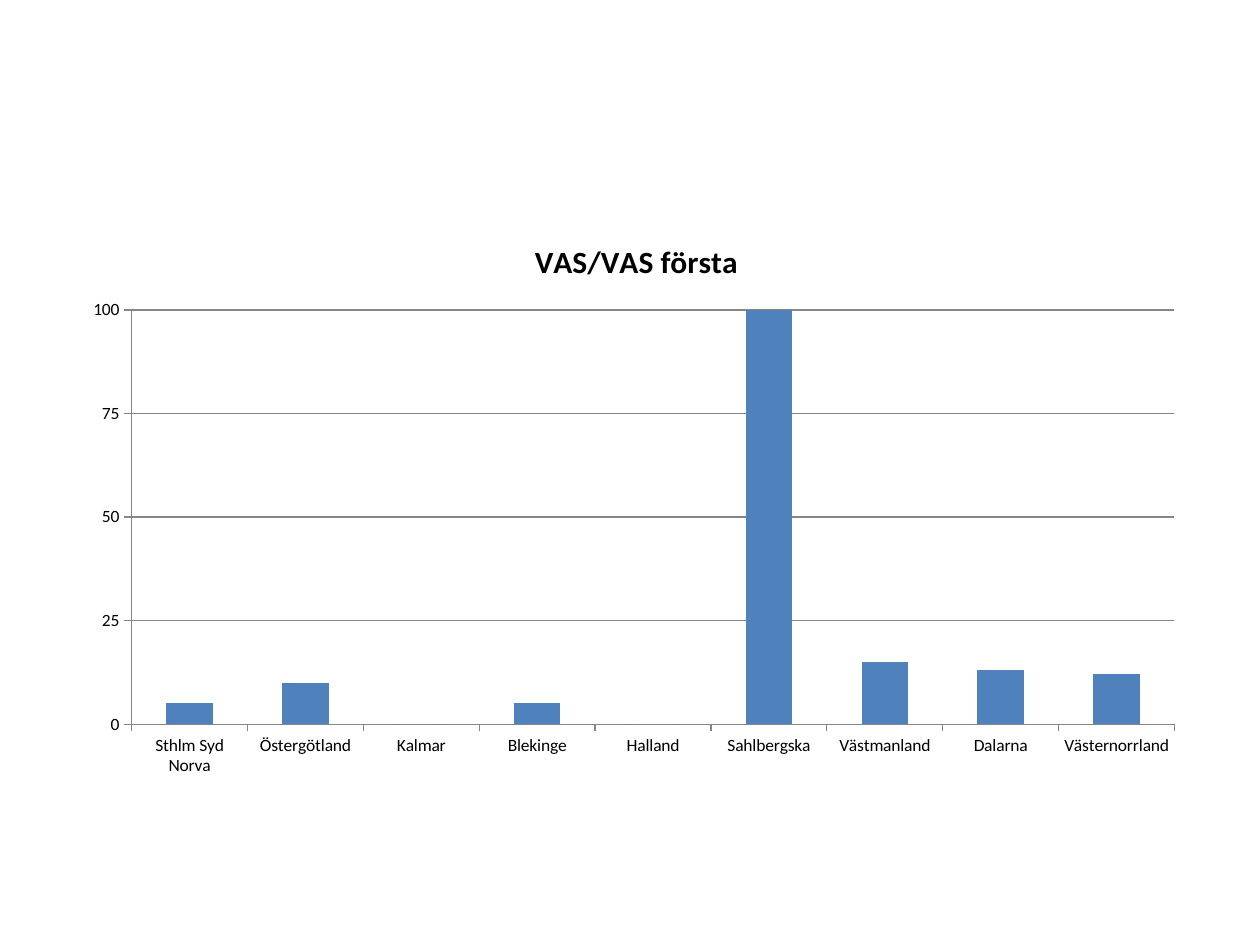
import pptx
import pptx.chart.data
import pptx.dml.color
import pptx.enum.chart
import pptx.oxml
import pptx.oxml.ns
import pptx.util

COLORS = {"text": "000000", "bar": "4F81BD", "line": "868686"}
TITLE = "VAS/VAS första"
RESULTS = {
    "Sthlm Syd Norva": 5,
    "Östergötland": 10,
    "Kalmar": 0,
    "Blekinge": 5,
    "Halland": 0,
    "Sahlbergska": 100,
    "Västmanland": 15,
    "Dalarna": 13,
    "Västernorrland": 12,
}


class SlideBuilder:
    """Holds the deck, its style and the current slide."""

    font_name = "Calibri"
    text_size = 10
    title_size = 18

    def __init__(self, width, height):
        self.deck = pptx.Presentation()
        self.deck.slide_width = pptx.util.Inches(width)
        self.deck.slide_height = pptx.util.Inches(height)
        self.slide = self.deck.slides.add_slide(self.deck.slide_layouts[6])

    def color(self, name):
        return pptx.dml.color.RGBColor.from_string(COLORS[name])

    def style_font(self, font, size, bold=False):
        font.name = self.font_name
        font.size = pptx.util.Pt(size)
        font.bold = bold
        font.color.rgb = self.color("text")

    def style_line(self, line):
        line.color.rgb = self.color("line")
        line.width = pptx.util.Pt(0.75)

    def column_chart(self, title, results, left, top, width, height):
        """Place a column chart; lengths are shares of the slide."""
        data = pptx.chart.data.CategoryChartData()
        data.categories = list(results)
        data.add_series(title, list(results.values()))
        across, down = self.deck.slide_width, self.deck.slide_height
        chart = self.slide.shapes.add_chart(
            pptx.enum.chart.XL_CHART_TYPE.COLUMN_CLUSTERED,
            int(left * across), int(top * down),
            int(width * across), int(height * down), data).chart
        self.style_font(chart.font, self.text_size)
        chart.has_legend = False

        # Title
        chart.has_title = True
        frame = chart.chart_title.text_frame
        frame.text = title
        self.style_font(frame.paragraphs[0].runs[0].font, self.title_size, True)
        chart.chart_title.include_in_layout = False

        # Bars
        plot = chart.plots[0]
        plot.gap_width = 150
        plot.vary_by_categories = False
        fill = plot.series[0].format.fill
        fill.solid()
        fill.fore_color.rgb = self.color("bar")

        # Axes and gridlines
        for axis in (chart.category_axis, chart.value_axis):
            axis.major_tick_mark = pptx.enum.chart.XL_TICK_MARK.OUTSIDE
            axis.minor_tick_mark = pptx.enum.chart.XL_TICK_MARK.NONE
            self.style_line(axis.format.line)
        scale = chart.value_axis
        scale.minimum_scale, scale.maximum_scale = 0, 100
        scale.major_unit = 25
        scale.has_major_gridlines = True
        self.style_line(scale.major_gridlines.format.line)
        return chart

    def place_plot(self, chart, **shares):
        """Fix the inner plot area as shares of the chart (x, y, w, h)."""
        area = chart._chartSpace.chart.plotArea
        for old in area.findall(pptx.oxml.ns.qn("c:layout")):
            area.remove(old)
        sizes = "".join(f'<c:{key} val="{share}"/>' for key, share in shares.items())
        area.insert(0, pptx.oxml.parse_xml(
            f'<c:layout {pptx.oxml.ns.nsdecls("c")}><c:manualLayout>'
            '<c:layoutTarget val="inner"/><c:xMode val="edge"/><c:yMode val="edge"/>'
            f'{sizes}</c:manualLayout></c:layout>'))


def main():
    builder = SlideBuilder(10, 7.5)
    chart = builder.column_chart(TITLE, RESULTS, 0.06, 0.23, 0.89, 0.59)
    builder.place_plot(chart, x=0.05, y=0.17, w=0.93, h=0.76)
    builder.deck.save("out.pptx")


if __name__ == "__main__":
    main()
